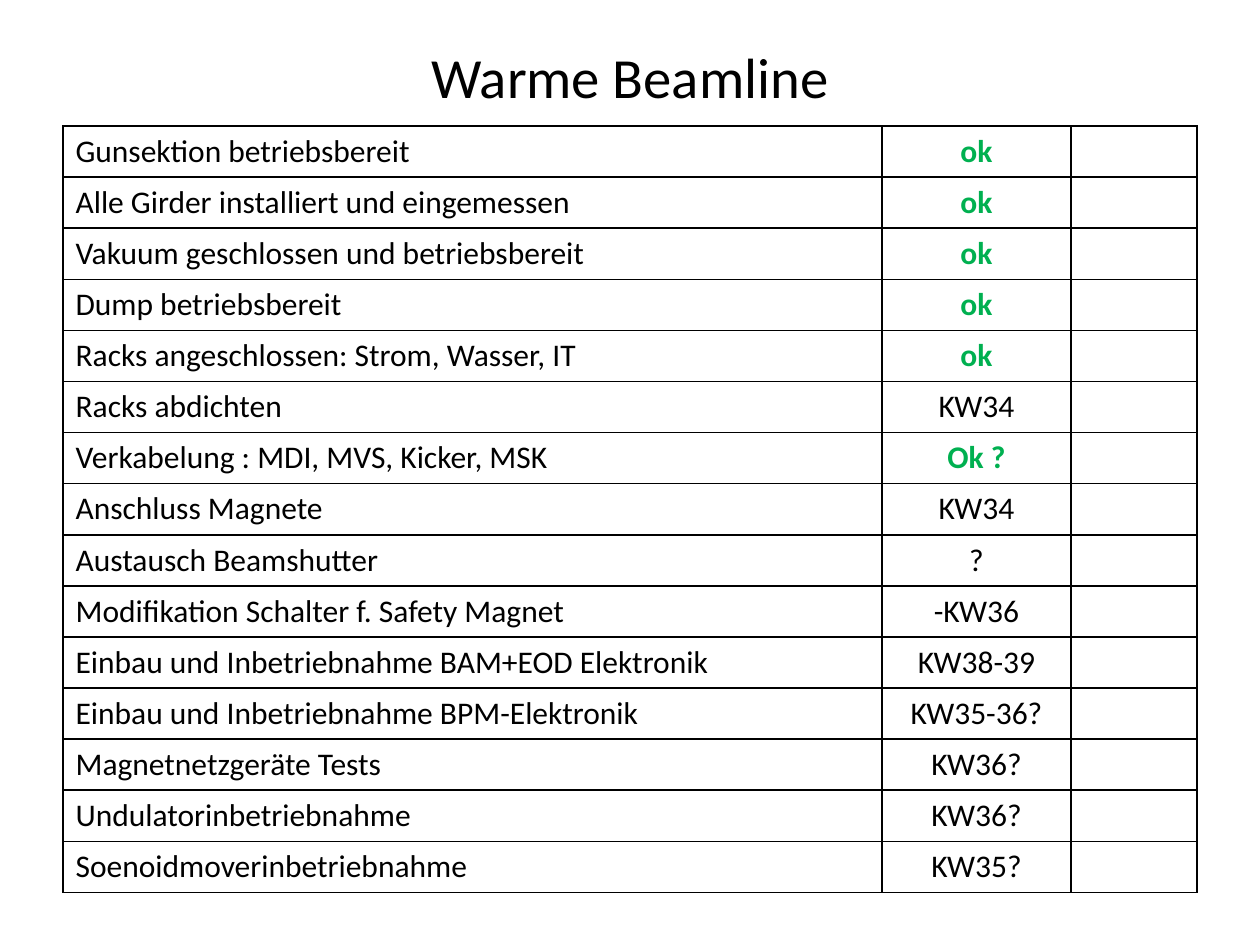
from lxml import etree
from pptx import Presentation
from pptx.dml.color import RGBColor
from pptx.enum.text import MSO_ANCHOR, PP_ALIGN
from pptx.oxml.ns import qn
from pptx.util import Cm, Pt

LEFT, CENTER = PP_ALIGN.LEFT, PP_ALIGN.CENTER
MIDDLE = MSO_ANCHOR.MIDDLE
TITLE_ONLY = 5
FONT = "Calibri"
BLACK, GREEN, WHITE = "000000", "00B050", "FFFFFF"

TASKS = [
    ("Gunsektion betriebsbereit", "ok"),
    ("Alle Girder installiert und eingemessen", "ok"),
    ("Vakuum geschlossen und betriebsbereit", "ok"),
    ("Dump betriebsbereit", "ok"),
    ("Racks angeschlossen: Strom, Wasser, IT", "ok"),
    ("Racks abdichten", "KW34"),
    ("Verkabelung : MDI, MVS, Kicker, MSK", "Ok ?"),
    ("Anschluss Magnete", "KW34"),
    ("Austausch Beamshutter", "?"),
    ("Modifikation Schalter f. Safety Magnet", "-KW36"),
    ("Einbau und Inbetriebnahme BAM+EOD Elektronik", "KW38-39"),
    ("Einbau und Inbetriebnahme BPM-Elektronik", "KW35-36?"),
    ("Magnetnetzgeräte Tests", "KW36?"),
    ("Undulatorinbetriebnahme", "KW36?"),
    ("Soenoidmoverinbetriebnahme", "KW35?"),
]
COLUMN_SHARES = (6.5, 1.5, 1)


def rgb(color):
    return RGBColor.from_string(color)


def write(frame, text, size, color=BLACK, bold=False, align=LEFT):
    paragraph = frame.paragraphs[0]
    paragraph.text = text
    paragraph.alignment = align
    for run in paragraph.runs:
        run.font.name = FONT
        run.font.size = Pt(size)
        run.font.bold = bold
        run.font.color.rgb = rgb(color)


def add_borders(cell, color=BLACK, width=1):
    """Line all four sides; the schema wants the lines ahead of the fill."""
    properties = cell._tc.get_or_add_tcPr()
    for position, side in enumerate(("lnL", "lnR", "lnT", "lnB")):
        line = etree.Element(qn(f"a:{side}"), w=str(Pt(width)))
        fill = etree.SubElement(line, qn("a:solidFill"))
        etree.SubElement(fill, qn("a:srgbClr"), val=color)
        properties.insert(position, line)


def place_title(slide, text, left, top, width, height):
    title = slide.shapes.title
    title.left, title.top, title.width, title.height = left, top, width, height
    title.text_frame.vertical_anchor = MIDDLE
    write(title.text_frame, text, 32.4, align=CENTER)


def add_task_table(slide, tasks, left, top, width, height):
    table = slide.shapes.add_table(
        len(tasks), len(COLUMN_SHARES), left, top, width, height).table
    table.first_row = table.horz_banding = False
    for column, share in zip(table.columns, COLUMN_SHARES):
        column.width = int(width * share / sum(COLUMN_SHARES))
    for row, (task, status) in zip(table.rows, tasks):
        row.height = height // len(tasks)
        task_cell, status_cell, _ = row.cells
        done = status.lower().startswith("ok")
        write(task_cell.text_frame, task, 18)
        write(status_cell.text_frame, status, 18,
              GREEN if done else BLACK, done, CENTER)
        for cell in row.cells:
            cell.fill.solid()
            cell.fill.fore_color.rgb = rgb(WHITE)
            add_borders(cell)


def main():
    deck = Presentation()
    deck.slide_width, deck.slide_height = Cm(25.4), Cm(19.05)
    slide = deck.slides.add_slide(deck.slide_layouts[TITLE_ONLY])
    left, width = Cm(1.27), Cm(22.86)
    place_title(slide, "Warme Beamline", left, Cm(0.64), width, Cm(1.78))
    add_task_table(slide, TASKS, left, Cm(2.54), width, Cm(15.45))
    deck.save("out.pptx")


if __name__ == "__main__":
    main()
